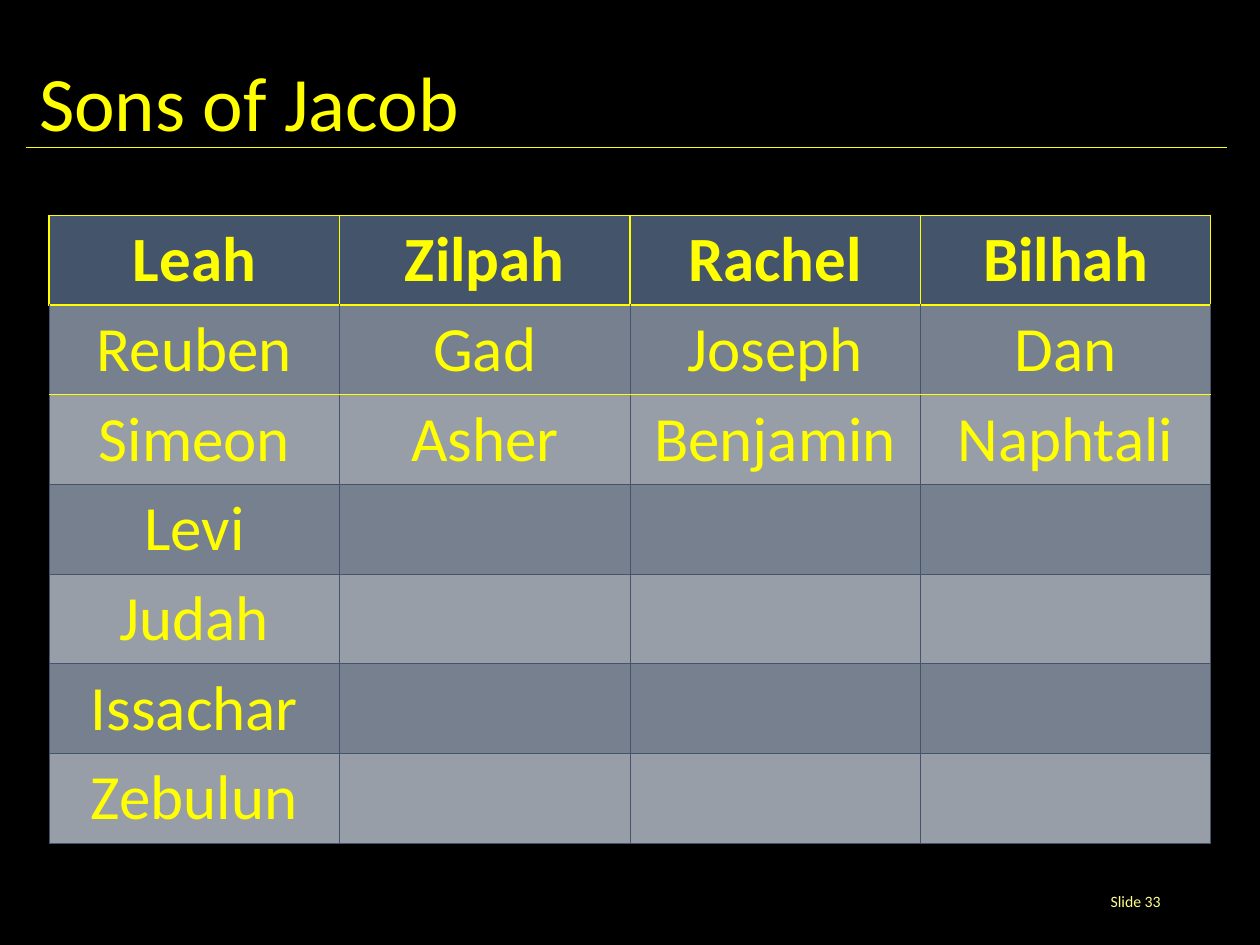
from lxml.etree import SubElement
from pptx import Presentation
from pptx.dml.color import RGBColor
from pptx.enum.shapes import MSO_CONNECTOR
from pptx.enum.text import MSO_ANCHOR, MSO_AUTO_SIZE, PP_ALIGN
from pptx.oxml import parse_xml
from pptx.oxml.ns import nsdecls, qn
from pptx.util import Inches, Pt

BLACK = RGBColor(0x00, 0x00, 0x00)
YELLOW = RGBColor(0xFF, 0xFF, 0x00)
PALE_YELLOW = RGBColor(0xFF, 0xFF, 0x8C)
SLATE = RGBColor(0x44, 0x54, 0x6A)
BAND_DARK = RGBColor(0x76, 0x80, 0x8F)
BAND_LIGHT = RGBColor(0x98, 0x9E, 0xA8)

TITLE_FONT = {"name": "Calibri", "size": Pt(44), "bold": False}
CELL_FONT = {"name": "Calibri", "size": Pt(36)}
NUMBER_FONT = {"name": "Calibri", "size": Pt(9)}

SONS = {
    "Leah": ["Reuben", "Simeon", "Levi", "Judah", "Issachar", "Zebulun"],
    "Zilpah": ["Gad", "Asher"],
    "Rachel": ["Joseph", "Benjamin"],
    "Bilhah": ["Dan", "Naphtali"],
}


def inches(box):
    """Turn a box in inches into lengths."""
    return [Inches(v) for v in box]


def write(p, text, font, color, align):
    """Put one formatted run into a paragraph."""
    p.alignment = align
    r = p.add_run()
    r.text = text
    for key, value in font.items():
        setattr(r.font, key, value)
    r.font.color.rgb = color


def set_borders(cell, borders):
    """Give a cell its left, right, top and bottom lines."""
    tc_pr = cell._tc.get_or_add_tcPr()
    for i, (side, (color, width)) in enumerate(zip("LRTB", borders)):
        ln = parse_xml(
            f'<a:ln{side} {nsdecls("a")} w="{Pt(width)}"><a:solidFill>'
            f'<a:srgbClr val="{color}"/></a:solidFill></a:ln{side}>')
        tc_pr.insert(i, ln)


def add_title(s, text, box):
    """Fill the title placeholder and rule a line under it."""
    left, top, width, height = inches(box)
    sp = s.shapes.title
    sp.left, sp.top, sp.width, sp.height = left, top, width, height
    tf = sp.text_frame
    tf.vertical_anchor = MSO_ANCHOR.MIDDLE
    tf.auto_size = MSO_AUTO_SIZE.NONE
    tf.paragraphs[0].line_spacing = 0.9
    write(tf.paragraphs[0], text, TITLE_FONT, YELLOW, PP_ALIGN.LEFT)
    y = top + int(height * 0.865)
    rule = s.shapes.add_connector(MSO_CONNECTOR.STRAIGHT, left, y, left + width, y)
    rule.line.color.rgb = YELLOW
    rule.line.width = Pt(0.5)
    SubElement(rule._element.spPr, qn("a:effectLst"))


def add_sons_table(s, sons, box):
    """Place a table with one column of sons per mother."""
    columns = [[mother, *names] for mother, names in sons.items()]
    n_rows = max(len(column) for column in columns)
    table = s.shapes.add_table(n_rows, len(columns), *inches(box)).table
    thick, thin = (YELLOW, 1), (SLATE, 0.5)
    for i in range(n_rows):
        fill = SLATE if i == 0 else BAND_DARK if i % 2 else BAND_LIGHT
        side = thick if i == 0 else thin
        top = thick if i <= 2 else thin
        bottom = thick if i <= 1 else thin
        for j, column in enumerate(columns):
            cell = table.cell(i, j)
            cell.fill.solid()
            cell.fill.fore_color.rgb = fill
            set_borders(cell, [side, side, top, bottom])
            if i < len(column):
                write(cell.text_frame.paragraphs[0], column[i],
                      {**CELL_FONT, "bold": i == 0}, YELLOW, PP_ALIGN.CENTER)


def add_slide_number(s, text, box):
    """Place the slide number at the right of its box."""
    tf = s.shapes.add_textbox(*inches(box)).text_frame
    tf.word_wrap = True
    tf.vertical_anchor = MSO_ANCHOR.MIDDLE
    write(tf.paragraphs[0], text, NUMBER_FONT, PALE_YELLOW, PP_ALIGN.RIGHT)


def main():
    """Build the slide and save it."""
    prs = Presentation()
    prs.slide_width, prs.slide_height = Inches(10), Inches(7.5)
    s = prs.slides.add_slide(prs.slide_layouts[5])
    s.background.fill.solid()
    s.background.fill.fore_color.rgb = BLACK
    add_title(s, "Sons of Jacob", (0.21, 0.4, 9.53, 0.89))
    add_slide_number(s, "Slide 33", (7.06, 6.95, 2.25, 0.4))
    add_sons_table(s, SONS, (0.39, 1.71, 9.22, 4.98))
    prs.save("out.pptx")


if __name__ == "__main__":
    main()
